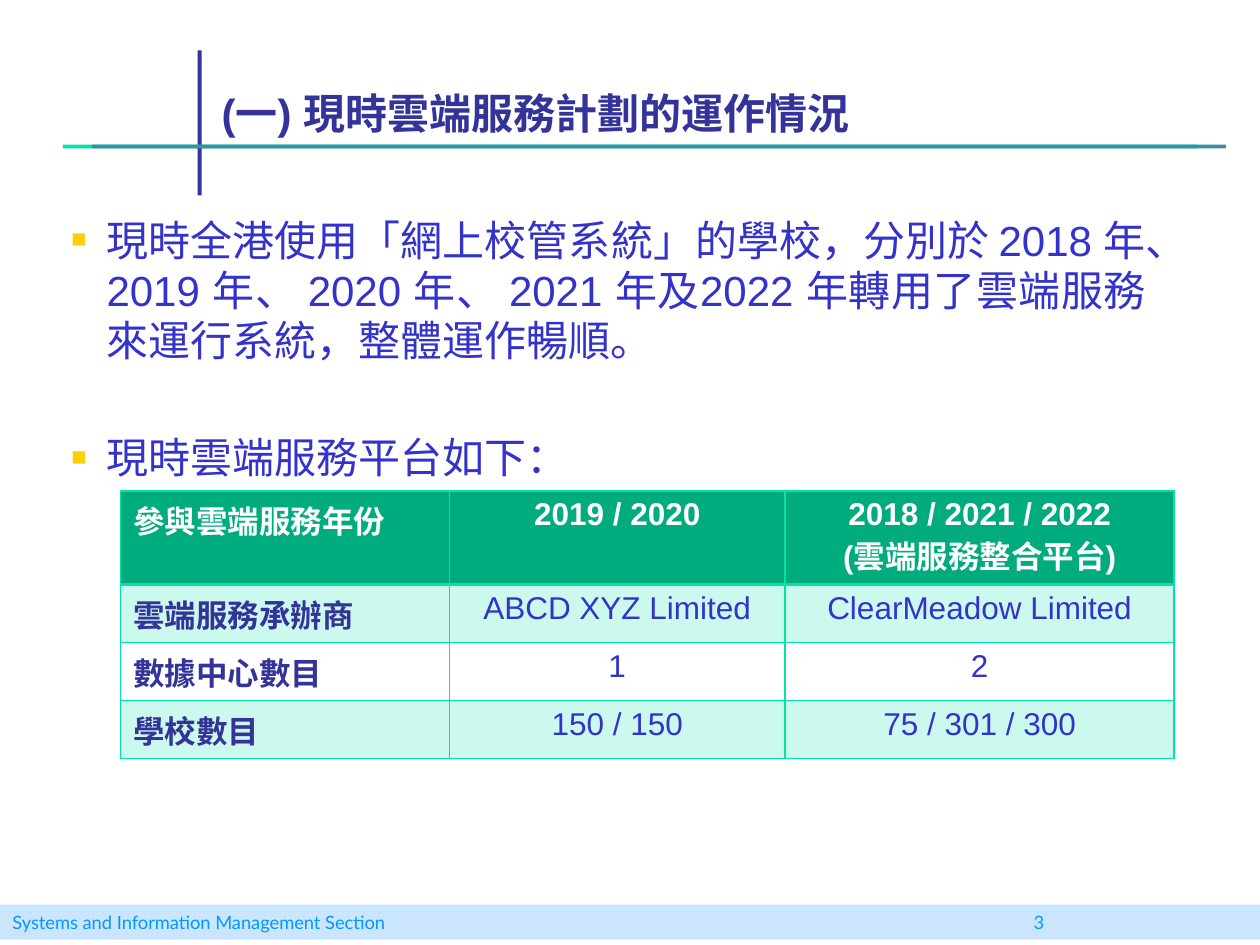
from lxml.etree import SubElement as Sub
from pptx import Presentation
from pptx.dml.color import RGBColor as RGB
from pptx.enum.shapes import MSO_SHAPE as Shape
from pptx.enum.text import MSO_ANCHOR as Anchor, PP_ALIGN as Align
from pptx.oxml.ns import qn
from pptx.util import Pt

WHITE = RGB(0xFF, 0xFF, 0xFF)
NAVY = RGB(0x33, 0x33, 0x99)
BLUE = RGB(0x33, 0x33, 0xCC)
MINT = RGB(0x00, 0xE4, 0xA8)
GREEN = RGB(0x00, 0xAB, 0x7E)
TEAL = RGB(0x3F, 0x8D, 0xA5)
GOLD = RGB(0xFF, 0xCF, 0x01)
SKY = RGB(0x99, 0xCC, 0xFF)
AZURE = RGB(0x00, 0x99, 0xFF)

TITLE = "(一) 現時雲端服務計劃的運作情況"
POINTS = [
    "現時全港使用「網上校管系統」的學校，分別於 2018 年、2019 年、 2020 年、 2021 年及2022 年"
    "轉用了雲端服務來運行系統，整體運作暢順。",
    "現時雲端服務平台如下：",
]
ROWS = [
    ["參與雲端服務年份", "2019 / 2020", "2018 / 2021 / 2022\n(雲端服務整合平台)"],
    ["雲端服務承辦商", "ABCD XYZ Limited", "ClearMeadow Limited"],
    ["數據中心數目", "1", "2"],
    ["學校數目", "150 / 150", "75 / 301 / 300"],
]


def style(para, size, color, bold=False, name="Arial"):
    font = para.font
    font.name, font.size, font.bold = name, Pt(size), bold
    font.color.rgb = color


def fade(host, percent):
    """Make the solid fill directly under an XML element see-through."""
    color = host.find(qn("a:solidFill")).find(qn("a:srgbClr"))
    Sub(color, qn("a:alpha"), val=str(percent * 1000))


def add_bar(slide, x, y, w, h, color):
    bar = slide.shapes.add_shape(Shape.RECTANGLE, Pt(x), Pt(y), Pt(w), Pt(h))
    bar.shadow.inherit = False
    bar.fill.solid()
    bar.fill.fore_color.rgb = color
    bar.line.fill.background()
    return bar


def add_box(slide, x, y, w, h, anchor=Anchor.TOP):
    box = slide.shapes.add_textbox(Pt(x), Pt(y), Pt(w), Pt(h))
    frame = box.text_frame
    frame.word_wrap = True
    frame.vertical_anchor = anchor
    return frame


def add_header(slide, x, y, w, h):
    rule = y + 0.65 * h
    add_bar(slide, x, rule, w - 16.5, 2.2, MINT)
    add_bar(slide, x + 77, y, 2.2, h, NAVY)
    add_bar(slide, x + 16.5, rule, w - 16.5, 2.2, TEAL)
    frame = add_box(slide, x + 83.5, y - 6, w - 101, rule - y + 6, Anchor.BOTTOM)
    para = frame.paragraphs[0]
    para.text = TITLE
    style(para, 24, NAVY, True)


def add_bullet(para):
    props = para._p.get_or_add_pPr()
    props.set("marL", str(Pt(20)))
    props.set("indent", str(Pt(-20)))
    Sub(Sub(props, qn("a:buClr")), qn("a:srgbClr"), val=str(GOLD))
    Sub(props, qn("a:buSzPct"), val="60000")
    Sub(props, qn("a:buFont"), typeface="Arial")
    Sub(props, qn("a:buChar"), char="■")


def add_points(slide, x, y, w, h):
    frame = add_box(slide, x, y, w, h)
    for i, text in enumerate(POINTS):
        para = frame.add_paragraph() if i else frame.paragraphs[0]
        para.text = text
        para.alignment = Align.JUSTIFY
        if i:
            para.space_before = Pt(38)
        add_bullet(para)
        style(para, 24, BLUE)


def add_edges(cell, widths):
    props = cell._tc.get_or_add_tcPr()
    for side, width in widths.items():
        line = Sub(props, qn("a:ln" + side), w=str(Pt(width)))
        Sub(Sub(line, qn("a:solidFill")), qn("a:srgbClr"), val=str(MINT))


def fill_cell(cell, text, row, col):
    head = row == 0
    add_edges(cell, {"L": 1, "R": 1, "T": 2 if row == 1 else 1, "B": 2 if head else 1})
    if row == 2:
        cell.fill.background()
    else:
        cell.fill.solid()
        cell.fill.fore_color.rgb = GREEN if head else MINT
        if not head:
            fade(cell._tc.tcPr, 20)
    cell.text = text
    for para in cell.text_frame.paragraphs:
        para.alignment = Align.CENTER if col else Align.LEFT
        color = WHITE if head else BLUE if col else NAVY
        style(para, 18, color, head or col == 0)


def add_grid(slide, x, y, widths, heights):
    table = slide.shapes.add_table(
        len(heights), len(widths), Pt(x), Pt(y), Pt(sum(widths)), Pt(sum(heights))
    ).table
    table.horz_banding = False
    for col, width in zip(table.columns, widths):
        col.width = Pt(width)
    for r, height in enumerate(heights):
        table.rows[r].height = Pt(height)
        for c, text in enumerate(ROWS[r]):
            fill_cell(table.cell(r, c), text, r, c)


def add_footer(slide, x, y, w, h):
    bar = add_bar(slide, x, y, w, h, SKY)
    fade(bar._element.spPr, 50)
    for left, width, text in [(0, 400, "Systems and Information Management Section"),
                              (583.5, 60, "3")]:
        frame = add_box(slide, x + left, y, width, h, Anchor.MIDDLE)
        para = frame.paragraphs[0]
        para.text = text
        style(para, 10.5, AZURE, name="Lato")


def main():
    deck = Presentation()
    deck.slide_width, deck.slide_height = Pt(720), Pt(540)
    slide = deck.slides.add_slide(deck.slide_layouts[6])
    add_header(slide, 36, 28.8, 664.5, 82.8)
    add_footer(slide, 0, 517, 720, 20)
    add_points(slide, 33.8, 118.8, 628, 363)
    add_grid(slide, 69, 280.5, [187.8, 191.8, 222.4], [53.5, 33.2, 33.2, 33.2])
    deck.save("out.pptx")


if __name__ == "__main__":
    main()
